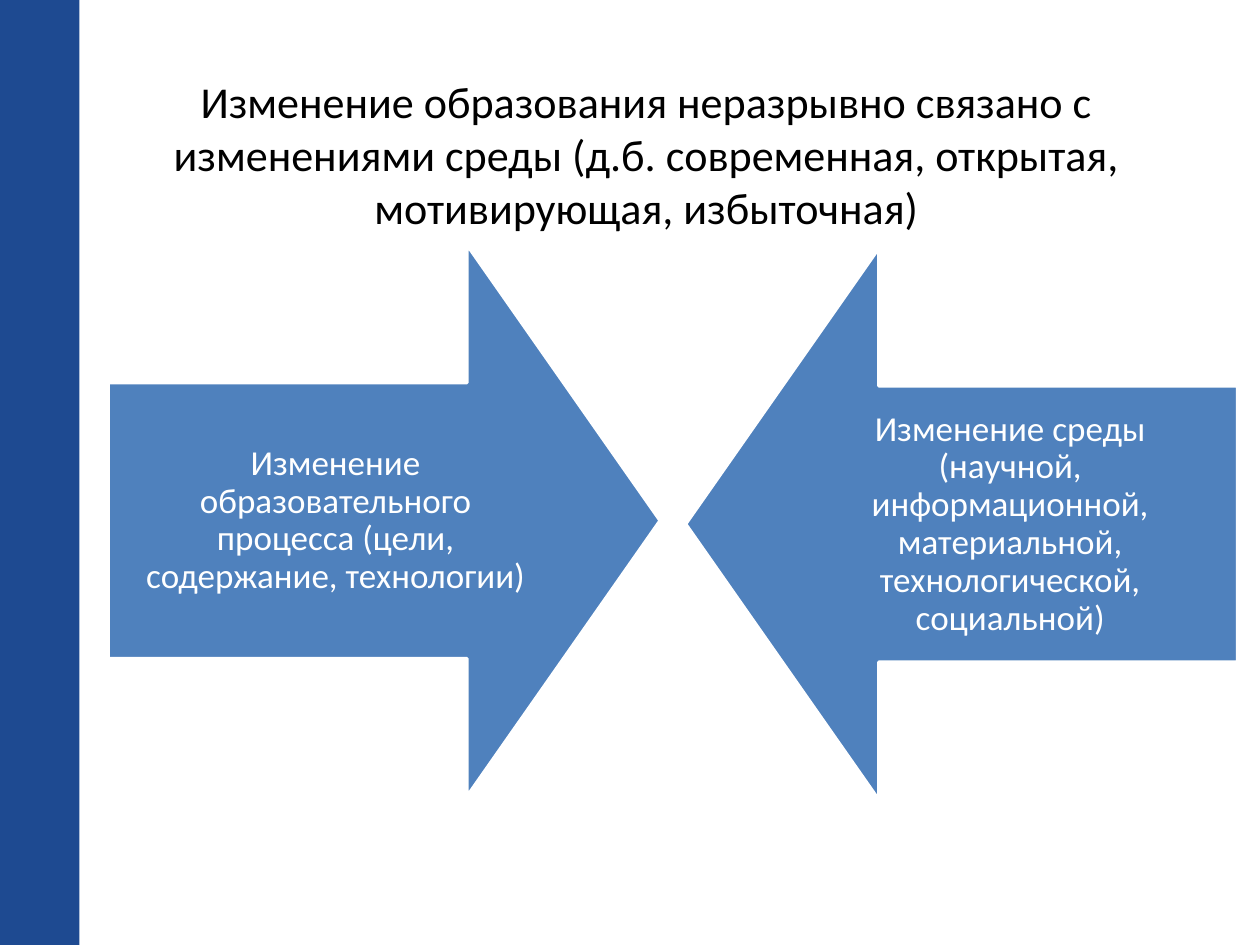
from pptx import Presentation
from pptx.dml.color import RGBColor
from pptx.enum import shapes, text
from pptx.util import Cm, Pt

TITLE = ("Изменение образования неразрывно связано с изменениями среды "
         "(д.б. современная, открытая, мотивирующая, избыточная)")
# label, arrow left, arrow top, rotation, label offset from arrow left (cm)
ARROW_SIDE, LABEL_WIDTH = 11.13, 9.17
LABEL_HEIGHT = ARROW_SIDE / 2
ARROWS = [
    ("Изменение образовательного процесса (цели, содержание, технологии)",
     2.18, 4.93, 270, 0),
    ("Изменение среды (научной, информационной, материальной, "
     "технологической, социальной)",
     13.82, 5.0, 90, ARROW_SIDE - LABEL_WIDTH),
]
BAR_WIDTH = 1.6
NAVY, BLUE, WHITE, BLACK = "1E4A91", "4F81BD", "FFFFFF", "000000"


def color(value):
    return RGBColor.from_string(value)


def add_filled(slide, kind, left, top, width, height, fill):
    shape = slide.shapes.add_shape(kind, Cm(left), Cm(top), Cm(width), Cm(height))
    shape.shadow.inherit = False
    shape.fill.solid()
    shape.fill.fore_color.rgb = color(fill)
    return shape


def add_label(slide, words, left, top, width, height, size, ink, inset, spacing):
    box = slide.shapes.add_textbox(Cm(left), Cm(top), Cm(width), Cm(height))
    frame = box.text_frame
    frame.word_wrap = True
    frame.vertical_anchor = text.MSO_ANCHOR.MIDDLE
    frame.margin_left = frame.margin_right = Cm(inset[0])
    frame.margin_top = frame.margin_bottom = Cm(inset[1])
    paragraph = frame.paragraphs[0]
    paragraph.alignment = text.PP_ALIGN.CENTER
    paragraph.line_spacing = spacing
    run = paragraph.add_run()
    run.text = words
    run.font.name = "Calibri"
    run.font.size = Pt(size)
    run.font.color.rgb = color(ink)


def main():
    deck = Presentation()
    deck.slide_width, deck.slide_height = Cm(25.4), Cm(19.05)
    slide = deck.slides.add_slide(deck.slide_layouts[6])

    add_label(slide, TITLE, BAR_WIDTH, 1.52, 22.86, 3.18, 25.2, BLACK,
              (0.25, 0.13), 1.0)

    for words, left, top, rotation, offset in ARROWS:
        arrow = add_filled(slide, shapes.MSO_SHAPE.DOWN_ARROW, left, top,
                           ARROW_SIDE, ARROW_SIDE, BLUE)
        arrow.rotation = rotation
        arrow.adjustments[0] = 0.5
        arrow.adjustments[1] = 0.35
        arrow.line.color.rgb = color(WHITE)
        arrow.line.width = Pt(2)
        add_label(slide, words, left + offset, top + (ARROW_SIDE - LABEL_HEIGHT) / 2,
                  LABEL_WIDTH, LABEL_HEIGHT, 20, WHITE, (0.4, 0.4), 0.9)

    bar = add_filled(slide, shapes.MSO_SHAPE.RECTANGLE, 0, 0, BAR_WIDTH, 19.05, NAVY)
    bar.line.fill.background()

    deck.save("out.pptx")


if __name__ == "__main__":
    main()
